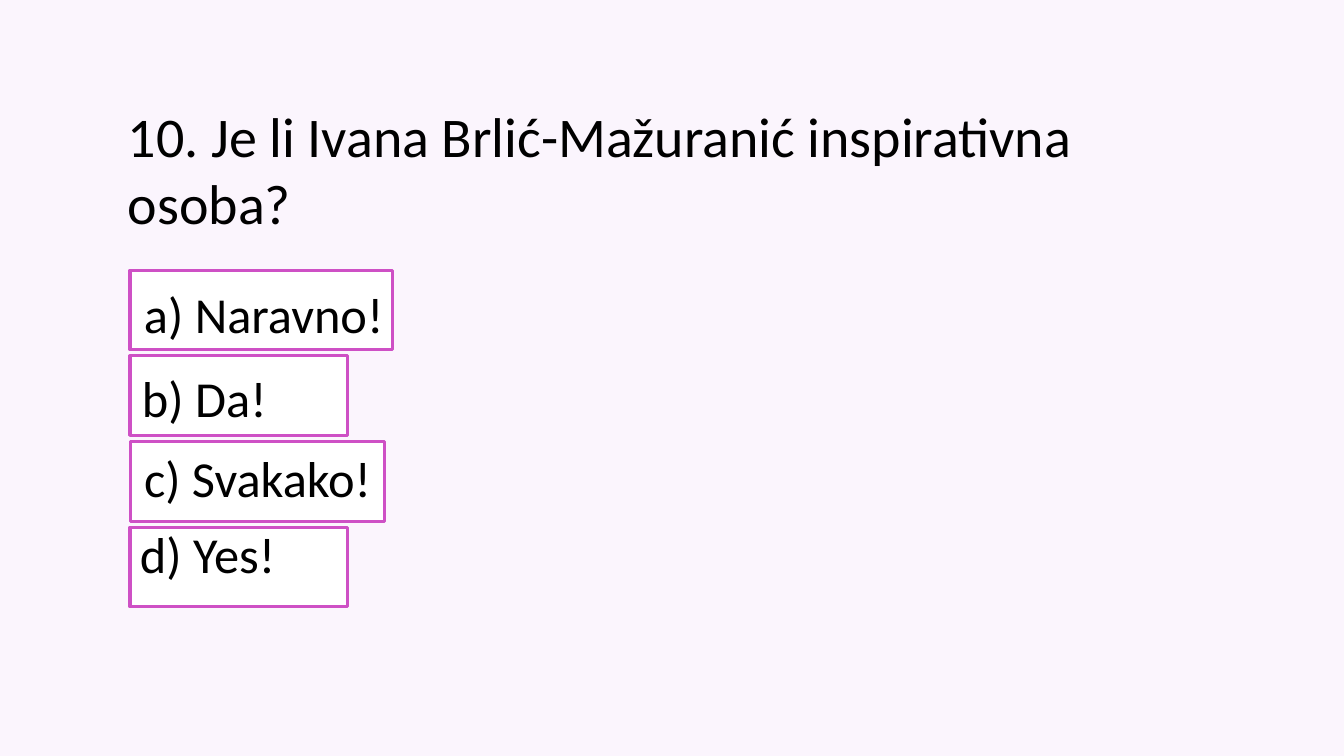
from pptx import Presentation
from pptx.dml.color import RGBColor
from pptx.enum.shapes import MSO_SHAPE as Preset
from pptx.enum.text import MSO_AUTO_SIZE as AutoSize
from pptx.util import Inches, Pt

COLORS = {"background": "FBF5FD", "frame": "CE50C5", "answer": "FFFFFF", "text": "000000"}


class QuizSlide:
    font = "Calibri"

    def __init__(self, deck):
        self.slide = deck.slides.add_slide(deck.slide_layouts[6])
        self.paint(self.slide.background.fill, "background")

    def paint(self, fill, color):
        fill.solid()
        fill.fore_color.rgb = RGBColor.from_string(COLORS[color])

    def frame(self, left, top, width, height):
        box = self.slide.shapes.add_shape(
            Preset.RECTANGLE, Inches(left), Inches(top), Inches(width), Inches(height))
        box.shadow.inherit = False
        self.paint(box.fill, "answer")
        self.paint(box.line.fill, "frame")
        box.line.width = Pt(2.25)

    def text(self, wording, left, top, width, height, size, wrap):
        body = self.slide.shapes.add_textbox(
            Inches(left), Inches(top), Inches(width), Inches(height)).text_frame
        body.word_wrap = wrap
        body.auto_size = AutoSize.SHAPE_TO_FIT_TEXT
        run = body.paragraphs[0].add_run()
        run.text = wording
        run.font.name = self.font
        run.font.size = Pt(size)
        self.paint(run.font.fill, "text")


def main():
    deck = Presentation()
    deck.slide_width, deck.slide_height = Inches(13.33), Inches(7.5)
    quiz = QuizSlide(deck)

    answers = [
        ("a) Naravno!", 2.6, 1.33, 2.76, 2.6),
        ("b) Da!", 2.16, 1.31, 3.59, 1.45),
        ("c) Svakako!", 2.52, 1.33, 4.39, 2.48),
        ("d) Yes!", 2.16, 1.29, 5.14, 1.56),
    ]
    first_top, step = 2.68, 0.85
    for row, (_, frame_width, *_) in enumerate(answers):
        quiz.frame(1.29, first_top + row * step, frame_width, 0.79)

    quiz.text("10. Je li Ivana Brlić-Mažuranić inspirativna osoba?",
              1.17, 0.96, 10.7, 1.45, size=40, wrap=True)
    for wording, _, left, top, width in answers:
        quiz.text(wording, left, top, width, 0.71, size=36, wrap=False)

    deck.save("out.pptx")


if __name__ == "__main__":
    main()
